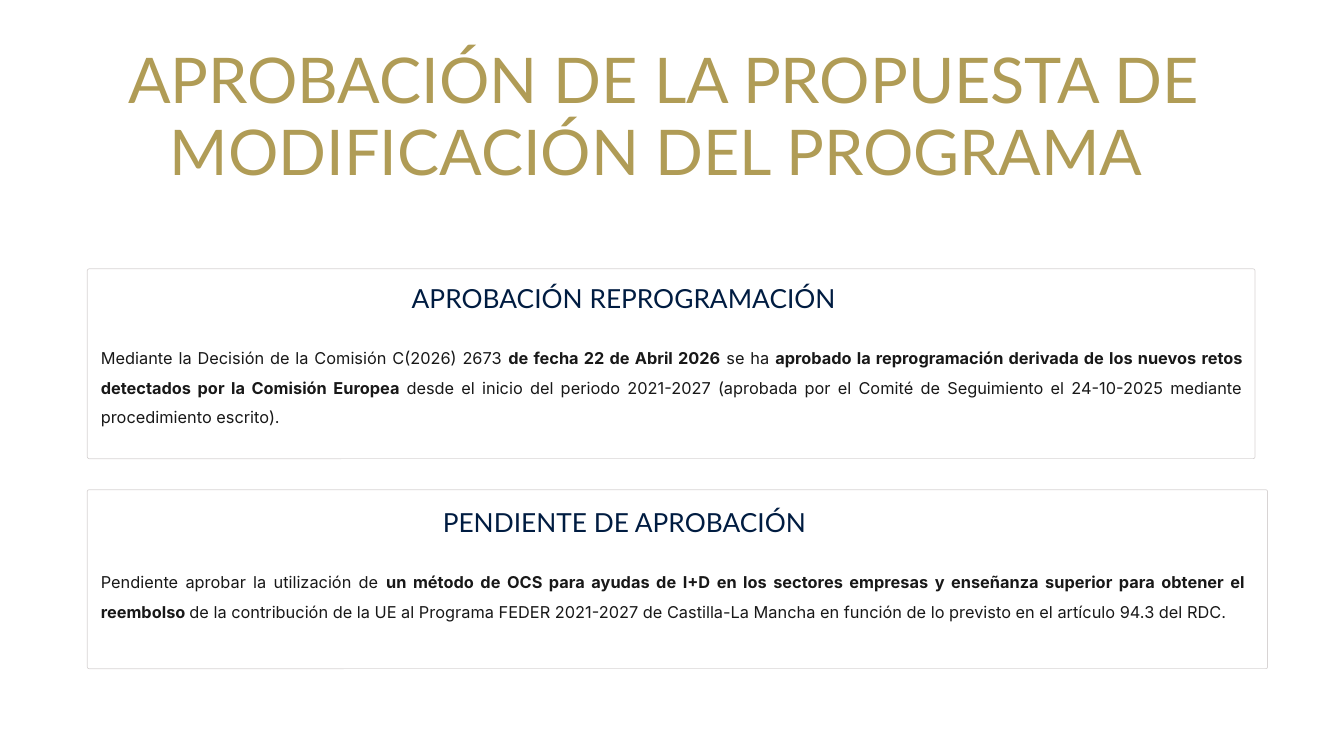
"""Build the slide on the approval of the programme modification."""
from dataclasses import dataclass

from pptx import Presentation
from pptx.dml.color import RGBColor
from pptx.enum.shapes import MSO_SHAPE
from pptx.enum.text import MSO_ANCHOR, MSO_AUTO_SIZE, PP_ALIGN
from pptx.slide import Slide
from pptx.text.text import TextFrame, _Paragraph
from pptx.util import Cm, Pt

ROUNDED = MSO_SHAPE.ROUNDED_RECTANGLE
TOP = MSO_ANCHOR.TOP
NO_AUTOFIT = MSO_AUTO_SIZE.NONE
LEFT, CENTER, JUSTIFY = PP_ALIGN.LEFT, PP_ALIGN.CENTER, PP_ALIGN.JUSTIFY

GOLD = RGBColor(0xB0, 0x9C, 0x56)
NAVY = RGBColor(0x00, 0x1C, 0x41)
INK = RGBColor(0x18, 0x18, 0x18)
BORDER = RGBColor(0xD8, 0xD4, 0xD4)
WHITE = RGBColor(0xFF, 0xFF, 0xFF)

TITLE_ONLY_LAYOUT = 5
PANEL_LEFT = 2.64
BODY_LEFT = 3.05


@dataclass(frozen=True)
class Span:
    text: str
    bold: bool = False


@dataclass(frozen=True)
class Style:
    font: str
    size: float
    color: RGBColor
    align: PP_ALIGN
    spacing: float | Pt


@dataclass(frozen=True)
class Panel:
    top: float
    width: float
    height: float
    heading: str
    heading_left: float
    heading_top: float
    heading_width: float
    body: tuple[Span, ...]
    body_top: float
    body_width: float
    body_height: float


TITLE = Style("Lato", 54, GOLD, CENTER, Pt(62))
HEADING = Style("Lato", 22.5, NAVY, LEFT, Pt(22.5))
BODY = Style("Inter", 14, INK, JUSTIFY, 1.5)

PANELS = (
    Panel(
        8.13, 35.31, 5.74,
        "APROBACIÓN REPROGRAMACIÓN", 12.45, 8.69, 13.84,
        (
            Span("Mediante la Decisión de la Comisión C(2026) 2673 "),
            Span("de fecha 22 de Abril 2026", True),
            Span(" se ha "),
            Span("aprobado la reprogramación derivada de los nuevos retos "
                 "detectados por la Comisión Europea ", True),
            Span("desde el inicio del periodo 2021-2027 (aprobada por el Comité de "
                 "Seguimiento el 24-10-2025 mediante procedimiento escrito)."),
        ),
        10.24, 34.54, 2.08,
    ),
    Panel(
        14.81, 35.69, 5.41,
        "PENDIENTE DE APROBACIÓN", 13.39, 15.47, 13.51,
        (
            Span("Pendiente aprobar la utilización de "),
            Span("un método de OCS para ayudas de I+D en los sectores empresas y "
                 "enseñanza superior para obtener el reembolso ", True),
            Span("de la contribución de la UE al Programa FEDER 2021-2027 de "
                 "Castilla-La Mancha en función de lo previsto en el artículo 94.3 del RDC."),
        ),
        17.02, 34.62, 1.73,
    ),
)


def add_spans(para: _Paragraph, spans: tuple[Span, ...], style: Style) -> None:
    para.alignment = style.align
    para.line_spacing = style.spacing
    for span in spans:
        run = para.add_run()
        run.text = span.text
        run.font.name = style.font
        run.font.size = Pt(style.size)
        run.font.bold = span.bold
        run.font.color.rgb = style.color


def fill_frame(frame: TextFrame, spans: tuple[Span, ...], style: Style, wrap: bool = True) -> None:
    frame.margin_left = frame.margin_top = frame.margin_right = frame.margin_bottom = 0
    frame.auto_size = NO_AUTOFIT
    frame.vertical_anchor = TOP
    frame.word_wrap = wrap
    add_spans(frame.paragraphs[0], spans, style)


def add_title(page: Slide) -> None:
    title = page.shapes.title
    title.left, title.top, title.width, title.height = Cm(1.5), Cm(1.32), Cm(37.13), Cm(4.39)
    text = "APROBACIÓN DE LA PROPUESTA DE MODIFICACIÓN DEL PROGRAMA "
    fill_frame(title.text_frame, (Span(text),), TITLE)


def add_panel(page: Slide, panel: Panel) -> None:
    card = page.shapes.add_shape(
        ROUNDED, Cm(PANEL_LEFT), Cm(panel.top), Cm(panel.width), Cm(panel.height))
    card.adjustments[0] = 0.01
    card.shadow.inherit = False
    card.fill.solid()
    card.fill.fore_color.rgb = WHITE
    card.line.color.rgb = BORDER
    card.line.width = Pt(0.6)

    heading = page.shapes.add_textbox(
        Cm(panel.heading_left), Cm(panel.heading_top), Cm(panel.heading_width), Cm(0.91))
    fill_frame(heading.text_frame, (Span(panel.heading),), HEADING, wrap=False)

    body = page.shapes.add_textbox(
        Cm(BODY_LEFT), Cm(panel.body_top), Cm(panel.body_width), Cm(panel.body_height))
    fill_frame(body.text_frame, panel.body, BODY)


def main() -> None:
    deck = Presentation()
    deck.slide_width, deck.slide_height = Cm(40.64), Cm(22.86)
    page = deck.slides.add_slide(deck.slide_layouts[TITLE_ONLY_LAYOUT])
    page.background.fill.solid()
    page.background.fill.fore_color.rgb = WHITE
    add_title(page)
    for panel in PANELS:
        add_panel(page, panel)
    deck.save("out.pptx")


if __name__ == "__main__":
    main()
